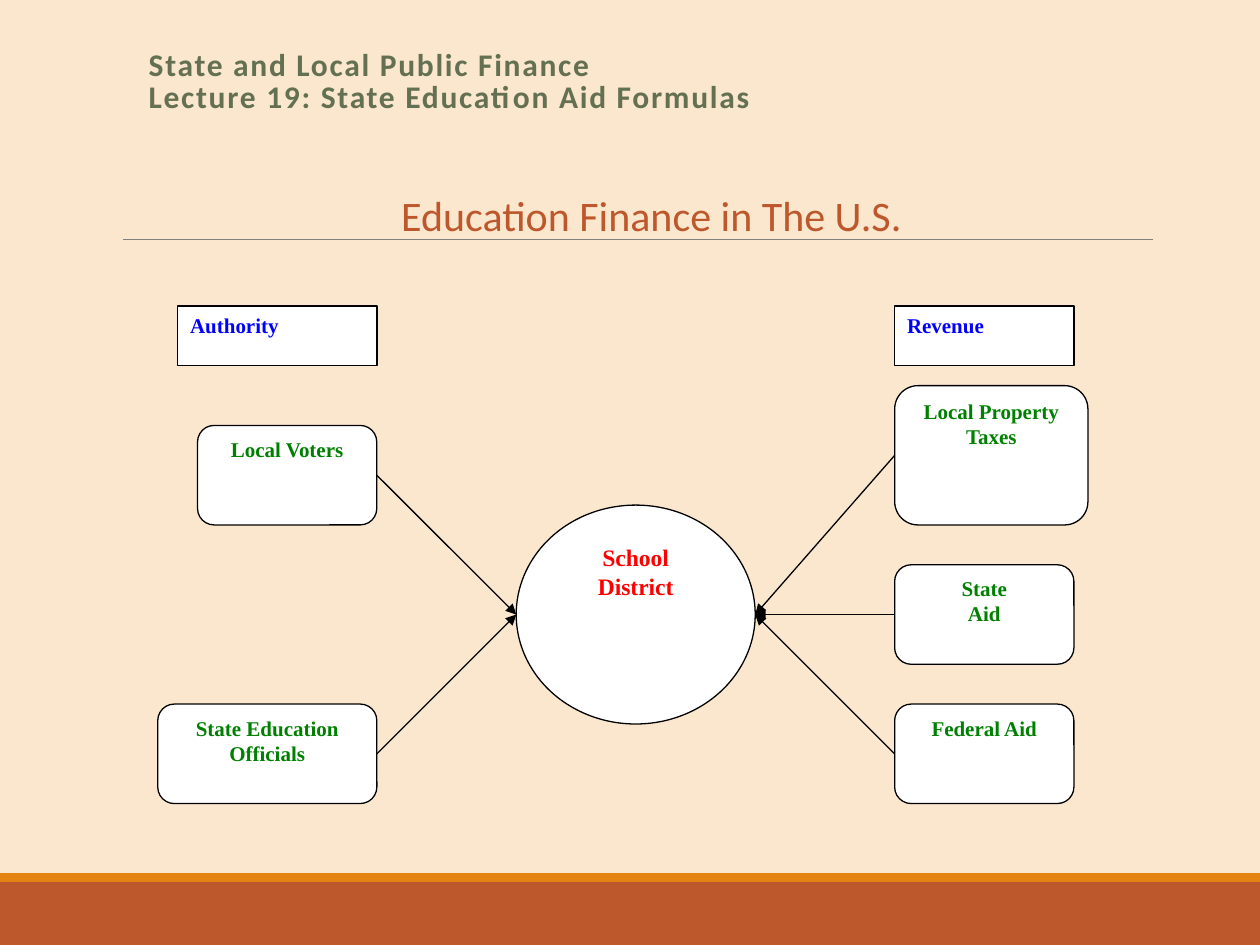
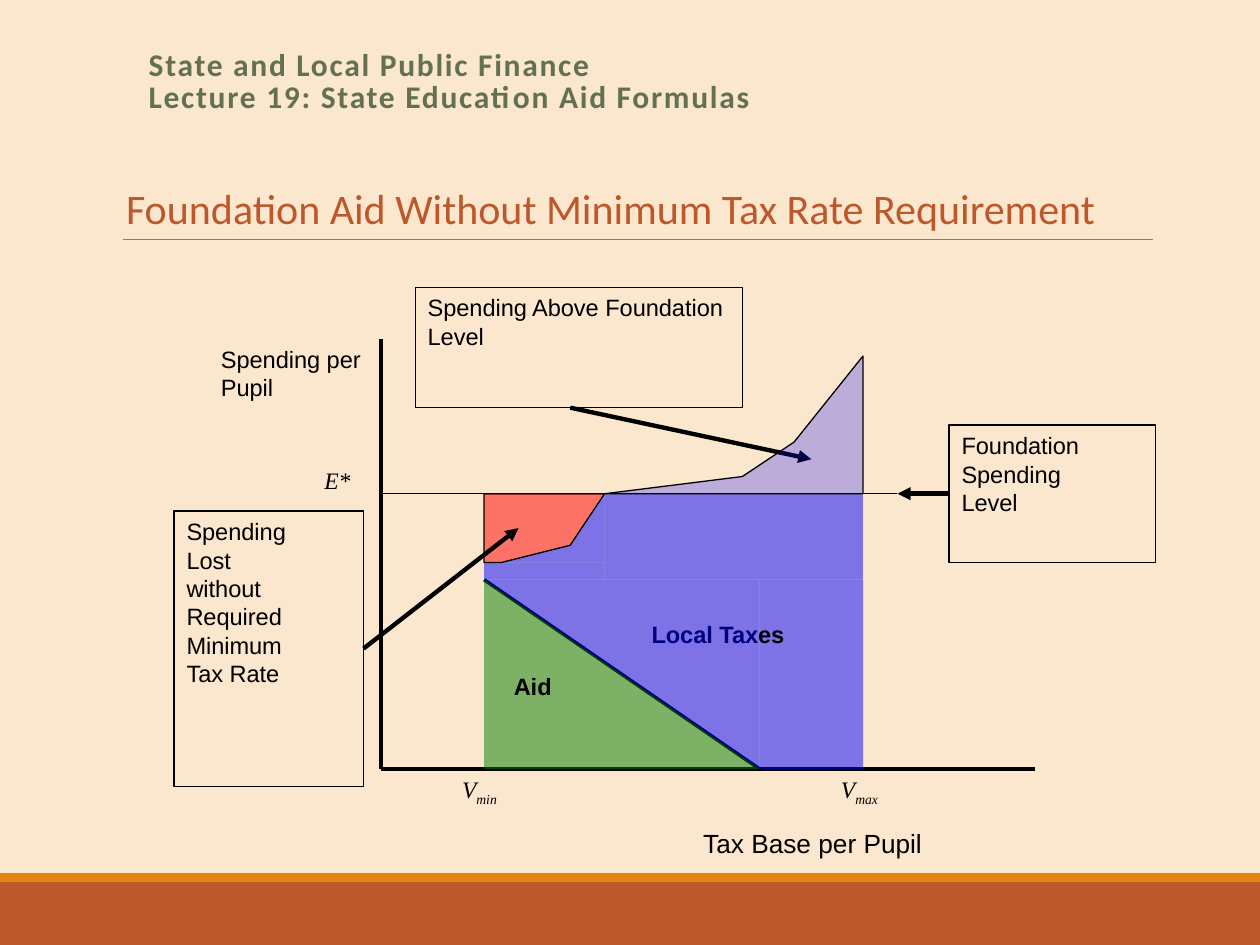
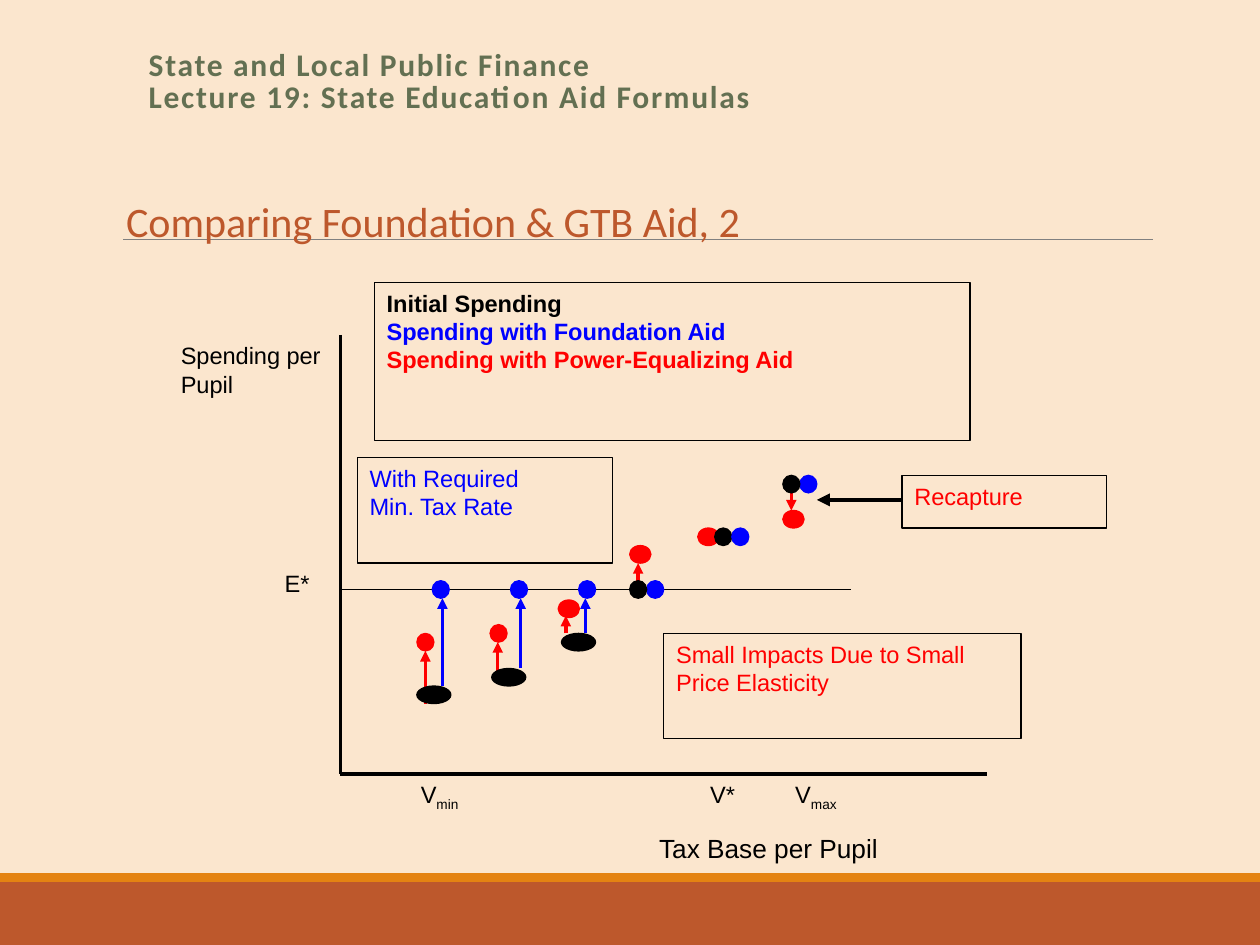
from dataclasses import dataclass

from lxml import etree
from pptx import Presentation
from pptx.dml.color import RGBColor
from pptx.enum import shapes, text
from pptx.oxml.ns import qn
from pptx.util import Cm, Pt

CREAM = RGBColor(0xFB, 0xE6, 0xCE)
RUST = RGBColor(0xBD, 0x58, 0x2C)
AMBER = RGBColor(0xE4, 0x83, 0x12)
OLIVE = RGBColor(0x63, 0x70, 0x52)
GRAY = RGBColor(0x80, 0x80, 0x80)
BLACK = RGBColor(0, 0, 0)
WHITE = RGBColor(0xFF, 0xFF, 0xFF)
RED = RGBColor(0xFF, 0, 0)
GREEN = RGBColor(0, 0x80, 0)
BLUE = RGBColor(0, 0, 0xFF)

SANS, SERIF, THEME = "Arial", "Times New Roman", "Calibri"
KIND = shapes.MSO_SHAPE
LEFT, CENTER = text.PP_ALIGN.LEFT, text.PP_ALIGN.CENTER
TOP, MIDDLE = text.MSO_ANCHOR.TOP, text.MSO_ANCHOR.MIDDLE
COURSE = "State and Local Public Finance\vLecture 19: State Education Aid Formulas"


@dataclass(frozen=True)
class Grid:
    """A drawing area in centimetres, divided into columns and rows."""
    left: float
    top: float
    width: float
    height: float
    cols: int
    rows: int

    def spot(self, x: float, y: float) -> tuple:
        return (Cm(self.left + x * self.width / self.cols),
                Cm(self.top + y * self.height / self.rows))

    def area(self, x: float, y: float, w: float, h: float) -> tuple:
        (x1, y1), (x2, y2) = self.spot(x, y), self.spot(x + w, y + h)
        return x1, y1, x2 - x1, y2 - y1


PAGE = Grid(0, 0, 25.4, 19.05, 1000, 750)
FLOW = Grid(3.18, 6.17, 18.47, 10.03, 46, 25)
AID = Grid(3.51, 5.79, 19.79, 10.06, 57, 29)
COMPARE = Grid(6.86, 5.69, 15.44, 9.91, 45, 28)


@dataclass(frozen=True)
class Box:
    """A shape or label, placed in grid units."""
    x: float
    y: float
    w: float
    h: float
    words: str = ""
    color: RGBColor = BLACK
    kind: int = KIND.RECTANGLE
    size: float = 13.5
    font: str = SANS
    bold: bool = False
    italic: bool = False
    align: int = LEFT


@dataclass(frozen=True)
class Stroke:
    """A line, placed in grid units."""
    x1: float
    y1: float
    x2: float
    y2: float
    color: RGBColor = BLACK
    width: float = 2.5
    head: bool = True


@dataclass(frozen=True)
class Dot:
    x: float
    y: float
    color: RGBColor
    w: float = 1


def write(frame, words: str, *, size: float = 13.5, font: str = SANS,
          color: RGBColor = BLACK, bold: bool = False, italic: bool = False,
          align: int = LEFT, anchor: int = TOP, leading: float = 1,
          track: float = 0) -> None:
    """Fill a frame, one paragraph a line; an underscore starts a subscript."""
    frame.word_wrap = True
    frame.auto_size = text.MSO_AUTO_SIZE.NONE
    frame.vertical_anchor = anchor
    for i, line in enumerate(words.split("\n")):
        para = frame.add_paragraph() if i else frame.paragraphs[0]
        base, _, sub = line.partition("_")
        para.text = base
        para.alignment = align
        para.line_spacing = leading
        para.space_before = Pt(0)
        if sub:
            run = para.add_run()
            run.text = sub
            run.font._element.set("baseline", "-25000")
        for run in para.runs:
            face = run.font
            face.size, face.name = Pt(size), font
            face.bold, face.italic = bold, italic
            face.color.rgb = color
            if track:
                face._element.set("spc", str(int(track * 100)))


def paint(shape, fill: RGBColor | None, line: RGBColor | None, alpha: int = 100) -> None:
    shape.shadow.inherit = False
    if fill is None:
        shape.fill.background()
    else:
        shape.fill.solid()
        shape.fill.fore_color.rgb = fill
        if alpha < 100:
            tone = shape.element.spPr.find(".//" + qn("a:srgbClr"))
            etree.SubElement(tone, qn("a:alpha")).set("val", str(alpha * 1000))
    if line is None:
        shape.line.fill.background()
    else:
        shape.line.color.rgb = line
        shape.line.width = Pt(0.75)


def style(box: Box) -> dict:
    return dict(size=box.size, font=box.font, color=box.color, bold=box.bold,
                italic=box.italic, align=box.align)


def label(slide, grid: Grid, box: Box) -> None:
    item = slide.shapes.add_textbox(*grid.area(box.x, box.y, box.w, box.h))
    write(item.text_frame, box.words, **style(box))


def block(slide, grid: Grid, box: Box, fill: RGBColor | None = None,
          line: RGBColor | None = BLACK, alpha: int = 100):
    item = slide.shapes.add_shape(box.kind, *grid.area(box.x, box.y, box.w, box.h))
    paint(item, fill, line, alpha)
    if box.words:
        write(item.text_frame, box.words, **style(box))
    return item


def draw(slide, grid: Grid, stroke: Stroke):
    item = slide.shapes.add_connector(
        shapes.MSO_CONNECTOR.STRAIGHT,
        *grid.spot(stroke.x1, stroke.y1), *grid.spot(stroke.x2, stroke.y2))
    item.line.color.rgb = stroke.color
    item.line.width = Pt(stroke.width)
    props = item.element.spPr
    if stroke.head:
        etree.SubElement(props.find(qn("a:ln")), qn("a:tailEnd")).set("type", "triangle")
    etree.SubElement(props, qn("a:effectLst"))
    return item


def region(slide, grid: Grid, points: list, fill: RGBColor, alpha: int,
           line: RGBColor | None = BLACK) -> None:
    """Draw a closed outline through grid points."""
    spots = [grid.spot(*point) for point in points]
    pen = slide.shapes.build_freeform(*spots[0])
    pen.add_line_segments(spots[1:], close=True)
    paint(pen.convert_to_shape(), fill, line, alpha)


def theme(deck, layout) -> None:
    """Put the background, bands and rule on the layout."""
    layout.background.fill.solid()
    layout.background.fill.fore_color.rgb = CREAM
    slide = deck.slides[0]
    parts = [
        block(slide, PAGE, Box(0, 700, 1000, 50), RUST, None),
        block(slide, PAGE, Box(0, 693, 1000, 7), AMBER, None),
        draw(slide, PAGE, Stroke(98, 190, 915, 190, GRAY, 0.5, False)),
    ]
    for number, part in enumerate(parts, 50):
        part.element.xpath(".//p:cNvPr")[0].set("id", str(number))
        layout.element.cSld.spTree.append(part.element)


def start(deck, layout, heading: str, place: tuple, align: int = LEFT):
    """Add a slide with the course title and its own heading."""
    slide = deck.slides.add_slide(layout)
    title, body = slide.shapes.title, slide.placeholders[1]
    for item, area in ((title, (108, 33, 825, 65)), (body, place)):
        item.left, item.top, item.width, item.height = PAGE.area(*area)
    write(title.text_frame, COURSE, size=18, font=THEME, color=OLIVE, bold=True,
          anchor=MIDDLE, leading=0.85, track=1)
    write(body.text_frame, heading, size=24, font=THEME, color=RUST, align=align)
    props = body.text_frame.paragraphs[0]._p.get_or_add_pPr()
    props.set("marL", "0")
    props.set("indent", "0")
    etree.SubElement(props, qn("a:buNone"))
    return slide


def axes(slide, grid: Grid, x: float, level: float, end: float) -> None:
    """Draw both axes and the line of the foundation level."""
    for stroke in (Stroke(x, 3, x, 28, width=2, head=False),
                   Stroke(x, 28, x + 38, 28, width=2, head=False),
                   Stroke(x, level, end, level, width=0.75, head=False)):
        draw(slide, grid, stroke)


def finance(slide) -> None:
    def node(x, y, w, h, words):
        return Box(x, y, w, h, words, GREEN, KIND.FLOWCHART_ALTERNATE_PROCESS,
                   12, SERIF, True, align=CENTER)

    def head(x, w, words):
        return Box(x, 0, w, 3, words, BLUE, KIND.FLOWCHART_PROCESS, 12, SERIF, True)

    for box in (
        Box(18, 10, 12, 11, "School District", RED, KIND.FLOWCHART_CONNECTOR,
            13.5, SERIF, True, align=CENTER),
        node(37, 4, 9.7, 7, "Local Property Taxes"),
        node(37, 13, 9, 5, "State\nAid"),
        node(37, 20, 9, 5, "Federal Aid"),
        node(2, 6, 9, 5, "Local Voters"),
        node(0, 20, 11, 5, "State Education Officials"),
        head(1, 10, "Authority"),
        head(37, 9, "Revenue"),
    ):
        block(slide, FLOW, box, WHITE)
    for x, y, target in ((11, 8.5, 18), (11, 22.5, 18),
                         (37, 7.5, 30), (37, 22.5, 30), (37, 15.5, 30)):
        draw(slide, FLOW, Stroke(x, y, target, 15.5, width=0.75))


def foundation(slide) -> None:
    def tint(x, y, w, h, color=BLUE, kind=KIND.RECTANGLE):
        return block(slide, AID, Box(x, y, w, h, kind=kind), color, None, 50)

    axes(slide, AID, 12, 12, 42)
    tint(25, 12, 15, 5)
    tint(34, 17, 6, 11)
    for box in (
        Box(8, 10, 4, 4, "E*", font=SERIF, italic=True),
        Box(2, 3, 12, 7, "Spending per Pupil"),
        Box(30, 31, 21, 4, "Tax Base per Pupil", size=15),
        Box(16, 28, 8, 4, "V_min", font=SERIF, italic=True),
        Box(38, 28, 8, 4, "V_max", font=SERIF, italic=True),
        Box(27, 19, 14, 4, "Local Taxes", bold=True),
    ):
        label(slide, AID, box)
    block(slide, AID, Box(45, 8, 12, 8, "Foundation\nSpending\nLevel"))
    block(slide, AID, Box(14, 0, 19, 7, "Spending Above Foundation Level"))
    draw(slide, AID, Stroke(23, 7, 37, 10))
    draw(slide, AID, Stroke(45, 12, 42, 12))
    region(slide, AID, [(18, 12), (25, 12), (33, 11), (36, 9), (40, 4), (40, 12)],
           BLUE, 25)
    draw(slide, AID, Stroke(18, 17, 34, 28, width=2, head=False))
    tint(18, 17, 16, 11, GREEN, KIND.RIGHT_TRIANGLE)
    tint(18, 17, 16, 11, BLUE, KIND.RIGHT_TRIANGLE).rotation = 180
    label(slide, AID, Box(19, 22, 6, 4, "Aid", bold=True))
    tint(18, 16, 7, 1)
    curve = [(18, 16), (19, 16), (23, 15), (25, 12)]
    region(slide, AID, curve + [(25, 16)], BLUE, 50, None)
    region(slide, AID, curve + [(18, 12)], RED, 50)
    block(slide, AID, Box(0, 13, 11, 16,
                          "Spending\nLost\nwithout\nRequired\nMinimum\nTax Rate"))
    draw(slide, AID, Stroke(11, 21, 20, 14))


def compare(slide) -> None:
    axes(slide, COMPARE, 0, 17.5, 30)
    for box in (
        Box(-4, 16, 4, 4, "E*"),
        Box(-10.1, 3, 10, 7, "Spending per Pupil"),
        Box(18, 31, 21, 4, "Tax Base per Pupil", size=15),
        Box(4, 28, 8, 4, "V_min"),
        Box(26, 28, 8, 4, "V_max"),
        Box(21, 28, 8, 4, "V*"),
    ):
        label(slide, COMPARE, box)
    legend = block(slide, COMPARE, Box(
        2, 0, 35, 9, "Initial Spending\nSpending with Foundation Aid\n"
        "Spending with Power-Equalizing Aid", bold=True))
    for para, color in zip(legend.text_frame.paragraphs, (BLACK, BLUE, RED)):
        para.runs[0].font.color.rgb = color
    for box in (
        Box(33, 11, 12, 3, "Recapture", RED),
        Box(19, 20, 21, 6, "Small Impacts Due to Small Price Elasticity", RED),
        Box(1, 10, 15, 6, "With Required\nMin. Tax Rate", BLUE),
    ):
        block(slide, COMPARE, box)
    draw(slide, COMPARE, Stroke(33, 12.4, 28, 12.4))
    for x, y, tip, color in (
        (5, 24, 21, RED), (6, 23, 18, BLUE),
        (9.25, 22.5, 20.5, RED), (10.6, 22, 18, BLUE),
        (13.25, 20, 19, RED), (14.4, 20, 18, BLUE),
        (17.5, 17, 16, RED), (26.5, 12, 13, RED),
    ):
        draw(slide, COMPARE, Stroke(x, y, x, tip, color, 2))
    for dot in (
        Dot(5.4, 17, BLUE), Dot(4.5, 20, RED), Dot(4.5, 23, BLACK, 2),
        Dot(10, 17, BLUE), Dot(8.8, 19.5, RED), Dot(8.9, 22, BLACK, 2),
        Dot(14, 17, BLUE), Dot(12.8, 18.1, RED, 1.25), Dot(13, 20, BLACK, 2),
        Dot(18, 17, BLUE), Dot(17, 15, RED, 1.25), Dot(17, 17, BLACK),
        Dot(21, 14, RED, 1.25), Dot(22, 14, BLACK), Dot(23, 14, BLUE),
        Dot(27, 11, BLUE), Dot(26, 13, RED, 1.25), Dot(26, 11, BLACK),
    ):
        block(slide, COMPARE, Box(dot.x, dot.y, dot.w, 1, kind=KIND.OVAL),
              dot.color, dot.color)


def main() -> None:
    deck = Presentation()
    deck.slide_width, deck.slide_height = Cm(25.4), Cm(19.05)
    layout = deck.slide_layouts[1]
    finance(start(deck, layout, "Education Finance in The U.S.",
                  (88, 145, 858, 84), CENTER))
    foundation(start(deck, layout, "Foundation Aid Without Minimum Tax Rate Requirement",
                     (90, 140, 833, 50)))
    compare(start(deck, layout, "Comparing Foundation & GTB Aid, 2",
                  (90, 150, 643, 50)))
    theme(deck, layout)
    deck.save("out.pptx")


if __name__ == "__main__":
    main()
